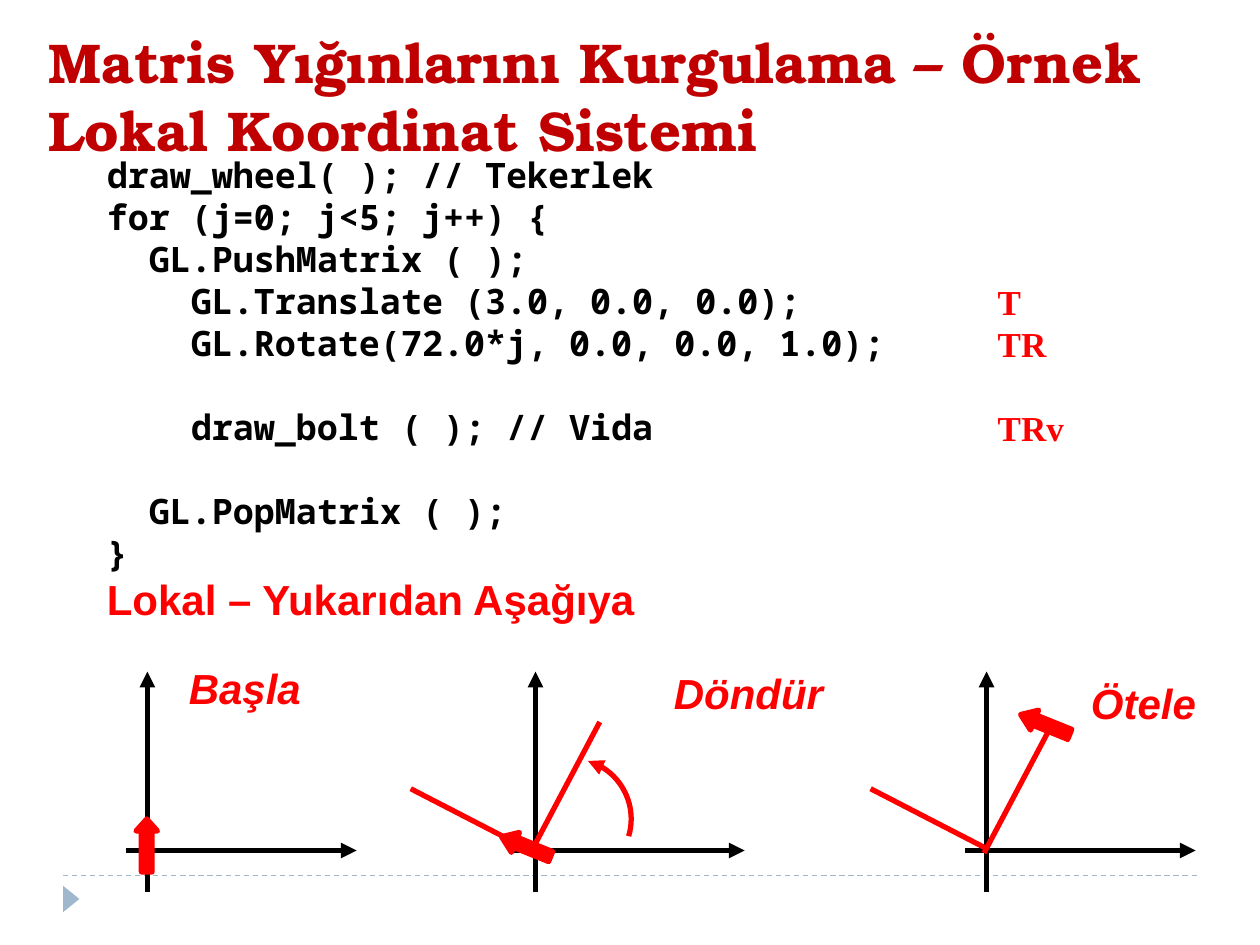
"""Build a slide on matrix stacks in a local coordinate system."""
from dataclasses import dataclass

from lxml import etree
from pptx import Presentation
from pptx.dml.color import RGBColor
from pptx.enum.dml import MSO_LINE
from pptx.enum.shapes import MSO_CONNECTOR, MSO_SHAPE
from pptx.enum.text import MSO_ANCHOR
from pptx.oxml.ns import qn
from pptx.util import Inches, Pt

STRAIGHT = MSO_CONNECTOR.STRAIGHT
DASH = MSO_LINE.DASH
ARC, TRIANGLE, UP_ARROW = MSO_SHAPE.ARC, MSO_SHAPE.ISOSCELES_TRIANGLE, MSO_SHAPE.UP_ARROW
TOP, MIDDLE = MSO_ANCHOR.TOP, MSO_ANCHOR.MIDDLE
RED, BLACK, CRIMSON, PALE_BLUE = "FF0000", "000000", "C00000", "9FB8CD"
CODE_INDENT = 24
LINE_PITCH = 24


@dataclass
class Font:
    name: str
    size: float
    color: str
    italic: bool = False


@dataclass
class Line:
    text: str
    level: int = 0
    gap: int = 0


@dataclass
class Step:
    label: str
    label_box: tuple
    origin_x: float


@dataclass
class Bolt:
    box: tuple
    rotation: float
    head: float


TITLE = Font("TeX Gyre Bonum", 32, CRIMSON)
CODE = Font("Noto Sans Mono", 20, BLACK)
MATRIX = Font("Times New Roman", 20, RED)
HEADING = Font("Arial", 24, RED)
STEP_LABEL = Font("Arial", 24, RED, True)

CODE_LINES = [
    Line("draw_wheel( ); // Tekerlek"),
    Line("for (j=0; j<5; j++) {"),
    Line("GL.PushMatrix ( );", 1),
    Line("GL.Translate (3.0, 0.0, 0.0);", 2),
    Line("GL.Rotate(72.0*j, 0.0, 0.0, 1.0);", 2),
    Line("draw_bolt ( ); // Vida", 2, 1),
    Line("GL.PopMatrix ( );", 1, 1),
    Line("}"),
]
MATRIX_LINES = [Line("T"), Line("TR"), Line("TRv", gap=1)]
STEPS = [
    Step("Başla", (1.4, 5.21, 1.1, 0.5), 1.17),
    Step("Döndür", (5.25, 5.25, 1.4, 0.5), 4.25),
    Step("Ötele", (8.56, 5.33, 1.04, 0.5), 7.83),
]
ROTATED_AXES = [
    ((4.21, 6.77), (4.76, 5.73)),
    ((4.19, 6.74), (3.26, 6.26)),
    ((7.81, 6.77), (8.36, 5.73)),
    ((7.84, 6.74), (6.91, 6.26)),
]
BOLTS = [
    Bolt((8.21, 5.54, 0.17, 0.42), 292, 0.7),
    Bolt((1.08, 6.5, 0.17, 0.42), 0, 0.56),
    Bolt((4.09, 6.51, 0.17, 0.42), 292, 0.7),
]


def rgb(value: str) -> RGBColor:
    """Turn a hex string into a colour."""
    return RGBColor.from_string(value)


def add_arrowhead(line, end: str) -> None:
    """Put a triangle on one end of a line."""
    etree.SubElement(line._get_or_add_ln(), qn(f"a:{end}")).set("type", "triangle")


def draw_line(shapes, start: tuple, finish: tuple, color: str, width: float = 3,
              arrow: bool = False, dashed: bool = False) -> None:
    """Draw a straight line, optionally dashed or ending in an arrow."""
    connector = shapes.add_connector(STRAIGHT, *map(Inches, start + finish))
    connector.line.color.rgb = rgb(color)
    connector.line.width = Pt(width)
    if dashed:
        connector.line.dash_style = DASH
    if arrow:
        add_arrowhead(connector.line, "tailEnd")
    etree.SubElement(connector._element.spPr, qn("a:effectLst"))


def draw_text(shapes, box: tuple, lines: list[Line], font: Font, wrap: bool = False,
              anchor=TOP, pitch: float | None = None) -> None:
    """Draw lines of text, with a vertical tab marking a line break."""
    frame = shapes.add_textbox(*map(Inches, box)).text_frame
    frame.word_wrap = wrap
    frame.vertical_anchor = anchor
    for index, line in enumerate(lines):
        paragraph = frame.add_paragraph() if index else frame.paragraphs[0]
        if pitch:
            paragraph.line_spacing = Pt(pitch)
            paragraph.space_before = Pt(line.gap * pitch)
        if line.level:
            indent = Pt(line.level * CODE_INDENT)
            paragraph._p.get_or_add_pPr().set("marL", str(indent))
        for part, words in enumerate(line.text.split("\v")):
            if part:
                paragraph.add_line_break()
            run = paragraph.add_run()
            run.text = words
            run.font.name = font.name
            run.font.size = Pt(font.size)
            run.font.bold = True
            run.font.italic = font.italic
            run.font.color.rgb = rgb(font.color)


def draw_axes(shapes, origin_x: float) -> None:
    """Draw a grouped pair of coordinate axes."""
    axes = shapes.add_group_shape().shapes
    draw_line(axes, (origin_x - 0.17, 6.75), (origin_x + 1.66, 6.75), BLACK, arrow=True)
    draw_line(axes, (origin_x, 7.08), (origin_x, 5.33), BLACK, arrow=True)


def draw_bolt(shapes, bolt: Bolt) -> None:
    """Draw the arrow that stands for a bolt."""
    arrow = shapes.add_shape(UP_ARROW, *map(Inches, bolt.box))
    arrow.shadow.inherit = False
    arrow.rotation = bolt.rotation
    arrow.adjustments[0] = 0.5
    arrow.adjustments[1] = bolt.head
    arrow.fill.solid()
    arrow.fill.fore_color.rgb = rgb(RED)
    arrow.line.color.rgb = rgb(RED)
    arrow.line.width = Pt(3)


def draw_turn(shapes, center: tuple, radius: float, first: float, last: float) -> None:
    """Draw the curved rotation arrow, with angles in degrees clockwise."""
    corner = [Inches(value - radius) for value in center]
    turn = shapes.add_shape(ARC, *corner, Inches(2 * radius), Inches(2 * radius))
    turn.shadow.inherit = False
    turn.adjustments[0] = first * 0.6
    turn.adjustments[1] = last * 0.6
    turn.fill.background()
    turn.line.color.rgb = rgb(RED)
    turn.line.width = Pt(3)
    add_arrowhead(turn.line, "headEnd")


def draw_footer(shapes) -> None:
    """Draw the dashed footer rule and its marker."""
    draw_line(shapes, (0.5, 6.95), (9.5, 6.95), PALE_BLUE, 0.75, dashed=True)
    marker = shapes.add_shape(TRIANGLE, *map(Inches, (0.46, 7.07, 0.21, 0.13)))
    marker.shadow.inherit = False
    marker.rotation = 90
    marker.fill.solid()
    marker.fill.fore_color.rgb = rgb(PALE_BLUE)
    marker.line.fill.background()


def main() -> None:
    """Assemble and save the slide."""
    deck = Presentation()
    deck.slide_width, deck.slide_height = Inches(10), Inches(7.5)
    shapes = deck.slides.add_slide(deck.slide_layouts[6]).shapes
    draw_footer(shapes)
    draw_text(shapes, (0.75, 4.5, 4.43, 0.5), [Line("Lokal – Yukarıdan Aşağıya")], HEADING)
    for step in STEPS:
        draw_axes(shapes, step.origin_x)
        draw_text(shapes, step.label_box, [Line(step.label)], STEP_LABEL)
    draw_turn(shapes, (4.53, 6.5), 0.48, 286.6, 16.6)
    for start, finish in ROTATED_AXES:
        draw_line(shapes, start, finish, RED)
    for bolt in BOLTS:
        draw_bolt(shapes, bolt)
    title = Line("Matris Yığınlarını Kurgulama – Örnek\vLokal Koordinat Sistemi")
    draw_text(shapes, (0.29, 0.13, 9.38, 1.25), [title], TITLE, True, MIDDLE)
    draw_text(shapes, (7.82, 2.18, 0.73, 1.45), MATRIX_LINES, MATRIX, pitch=LINE_PITCH)
    draw_text(shapes, (0.75, 1.15, 6.43, 3.47), CODE_LINES, CODE, True, MIDDLE, LINE_PITCH)
    deck.save("out.pptx")


if __name__ == "__main__":
    main()
